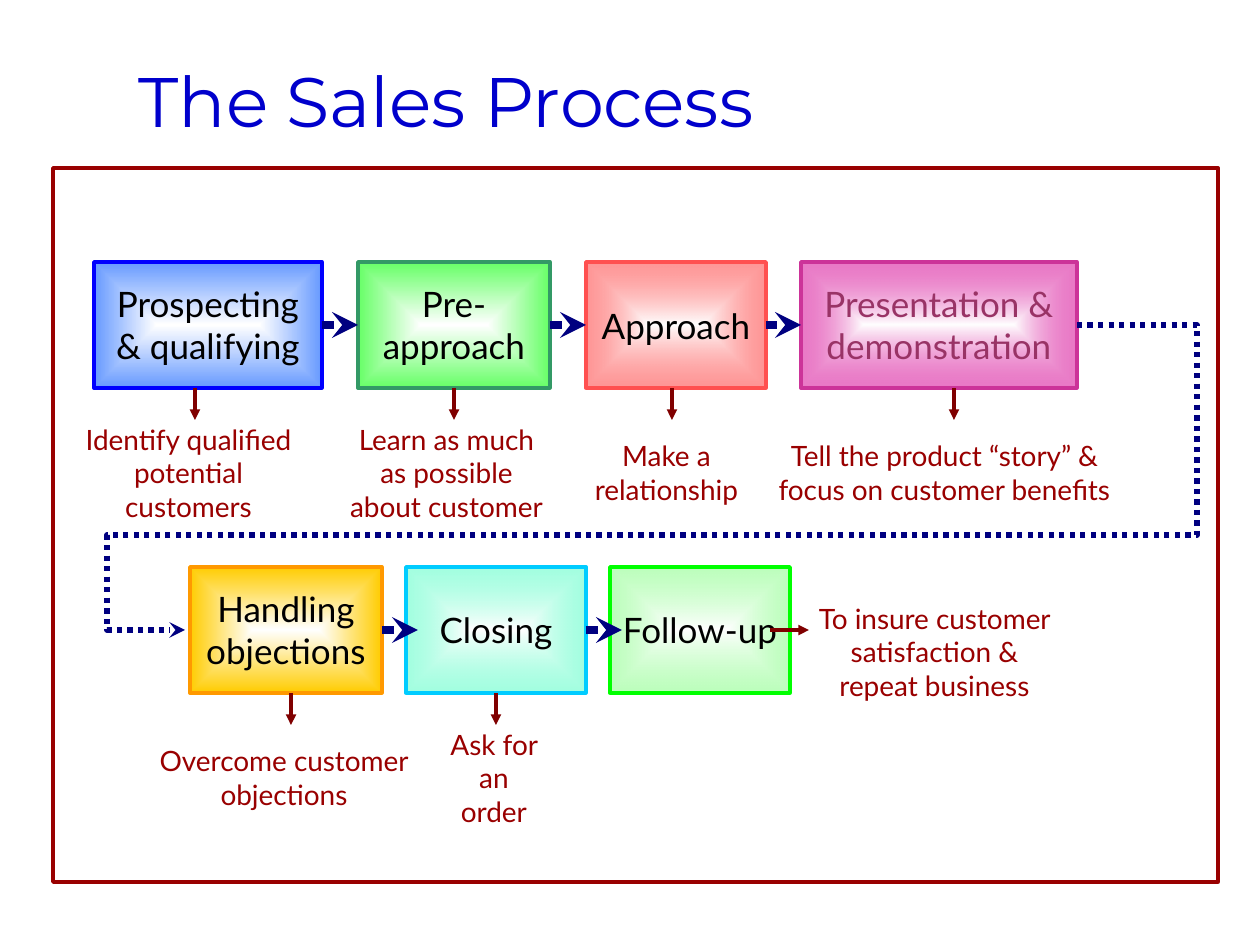
from lxml import etree
from pptx import Presentation
from pptx.dml.color import RGBColor
from pptx.enum.dml import MSO_LINE
from pptx.enum.shapes import MSO_CONNECTOR, MSO_SHAPE
from pptx.enum.text import MSO_ANCHOR, PP_ALIGN
from pptx.oxml import parse_xml
from pptx.oxml.ns import nsdecls, qn
from pptx.util import Emu, Pt

STRAIGHT = MSO_CONNECTOR.STRAIGHT
RECTANGLE = MSO_SHAPE.RECTANGLE
MIDDLE = MSO_ANCHOR.MIDDLE
LEFT, CENTER = PP_ALIGN.LEFT, PP_ALIGN.CENTER
DOTTED = MSO_LINE.ROUND_DOT
SIDE_LEFT, SIDE_BOTTOM, SIDE_RIGHT = 1, 2, 3

SCALE = 914400 / 126
TITLE = "The Sales Process"
NAVY, MAROON, RED = "000080", "800000", "990000"
STEP_HEIGHT, NOTE_HEIGHT, DROP = 126, 105, 32
ROW_TOPS = (262, 567)
OVERLAP = 12

# row, left, width, text, fill, opacity, line, text colour, down arrow x
STEPS = [
    (0, 94, 228, "Prospecting & qualifying", "6699FF", 100, "0000FF", "000000", 195),
    (0, 358, 192, "Pre-approach", "66FF66", 100, "339966", "000000", 454),
    (0, 586, 180, "Approach", "FF5050", 60, "FF5050", "000000", 672),
    (0, 801, 276, "Presentation & demonstration", "D60093", 52, "CC3399", "993366", 954),
    (1, 190, 192, "Handling objections", "FFCC00", 100, "FF9900", "000000", 291),
    (1, 406, 180, "Closing", "66FFCC", 60, "00CCFF", "000000", 496),
    (1, 610, 180, "Follow-up", "99FF99", 65, "00FF00", "000000", None),
]
NOTES = [
    (73, 420, 231, "Identify qualified potential customers"),
    (336, 420, 221, "Learn as much as possible about customer"),
    (567, 420, 199, "Make a relationship"),
    (766, 420, 357, "Tell the product “story” & focus on customer benefits"),
    (147, 725, 274, "Overcome customer objections"),
    (431, 725, 126, "Ask for an order"),
    (798, 599, 273, "To insure customer satisfaction & repeat business"),
]
RETURN_PATH = [(1077, 325), (1197, 325), (1197, 535), (107, 535), (107, 630), (185, 630)]


def px(*values):
    return [Emu(round(value * SCALE)) for value in values]


def color(value):
    return RGBColor.from_string(value)


def write(shape, text, size=16, font="Lato", fill=RED, align=CENTER):
    frame = shape.text_frame
    frame.word_wrap = True
    frame.vertical_anchor = MIDDLE
    paragraph = frame.paragraphs[0]
    paragraph.alignment = align
    run = paragraph.add_run()
    run.text = text
    run.font.size = Pt(size)
    run.font.name = font
    run.font.color.rgb = color(fill)


def set_line(shape, line_color, width, head=None):
    shape.line.color.rgb = color(line_color)
    shape.line.width = Pt(width)
    if head:
        line = shape.line._get_or_add_ln()
        etree.SubElement(line, qn("a:tailEnd"), type=head)


def add_box(slide, bounds, line_color):
    shape = slide.shapes.add_shape(RECTANGLE, *px(*bounds))
    shape.shadow.inherit = False
    set_line(shape, line_color, 2)
    return shape


def glow(shape, edge, opacity):
    shape.fill.gradient()
    for stop, position, value in zip(shape.fill.gradient_stops, (0, 1), ("FFFFFF", edge)):
        stop.position = position
        stop.color.rgb = color(value)
    gradient = shape.element.spPr.find(qn("a:gradFill"))
    if opacity < 100:
        edge_color = gradient.findall(".//" + qn("a:srgbClr"))[-1]
        etree.SubElement(edge_color, qn("a:alpha"), val=str(opacity * 1000))
    gradient.replace(gradient.find(qn("a:lin")), parse_xml(
        f'<a:path {nsdecls("a")} path="rect">'
        '<a:fillToRect l="50000" t="50000" r="50000" b="50000"/></a:path>'))


def add_arrow(slide, start, end, line_color, width, head):
    arrow = slide.shapes.add_connector(STRAIGHT, *px(*start, *end))
    set_line(arrow, line_color, width, head)
    etree.SubElement(arrow.element.spPr, qn("a:effectLst"))
    return arrow


def add_step(slide, step):
    row, left, width, text, fill, opacity, line_color, text_color, arrow_x = step
    top = ROW_TOPS[row]
    shape = add_box(slide, (left, top, width, STEP_HEIGHT), line_color)
    glow(shape, fill, opacity)
    write(shape, text, size=20, fill=text_color)
    if arrow_x:
        bottom = top + STEP_HEIGHT
        arrow = add_arrow(slide, (arrow_x, bottom), (arrow_x, bottom + DROP), MAROON, 2, "triangle")
        if arrow_x == left + width / 2:
            arrow.begin_connect(shape, SIDE_BOTTOM)
    return shape


def link_steps(slide, steps, shapes):
    for index in range(len(steps) - 1):
        row, left, width = steps[index][:3]
        next_row, next_left = steps[index + 1][:2]
        if row != next_row:
            continue
        middle = ROW_TOPS[row] + STEP_HEIGHT // 2
        end = next_left + OVERLAP * row
        arrow = add_arrow(slide, (left + width, middle), (end, middle), NAVY, 5, "stealth")
        arrow.begin_connect(shapes[index], SIDE_RIGHT)
        if end == next_left:
            arrow.end_connect(shapes[index + 1], SIDE_LEFT)


def add_return_path(slide):
    builder = slide.shapes.build_freeform(*RETURN_PATH[0], scale=SCALE)
    builder.add_line_segments(RETURN_PATH[1:], close=False)
    shape = builder.convert_to_shape()
    shape.shadow.inherit = False
    shape.fill.background()
    shape.line.dash_style = DOTTED
    set_line(shape, NAVY, 3, "stealth")


def main():
    presentation = Presentation()
    presentation.slide_width, presentation.slide_height = px(1260, 945)
    slide = presentation.slides.add_slide(presentation.slide_layouts[5])
    title = slide.shapes.title
    title.left, title.top, title.width, title.height = px(126, 53, 1071, 94)
    write(title, TITLE, size=40, font="Montserrat", fill="0000CC", align=LEFT)

    frame = add_box(slide, (53, 168, 1165, 714), RED)
    frame.fill.solid()
    frame.fill.fore_color.rgb = color("FFFFFF")

    shapes = [add_step(slide, step) for step in STEPS]
    link_steps(slide, STEPS, shapes)
    add_return_path(slide)
    for left, top, width, text in NOTES:
        write(slide.shapes.add_textbox(*px(left, top, width, NOTE_HEIGHT)), text)
    add_arrow(slide, (770, 630), (809, 630), MAROON, 2, "triangle")
    presentation.save("out.pptx")


if __name__ == "__main__":
    main()
